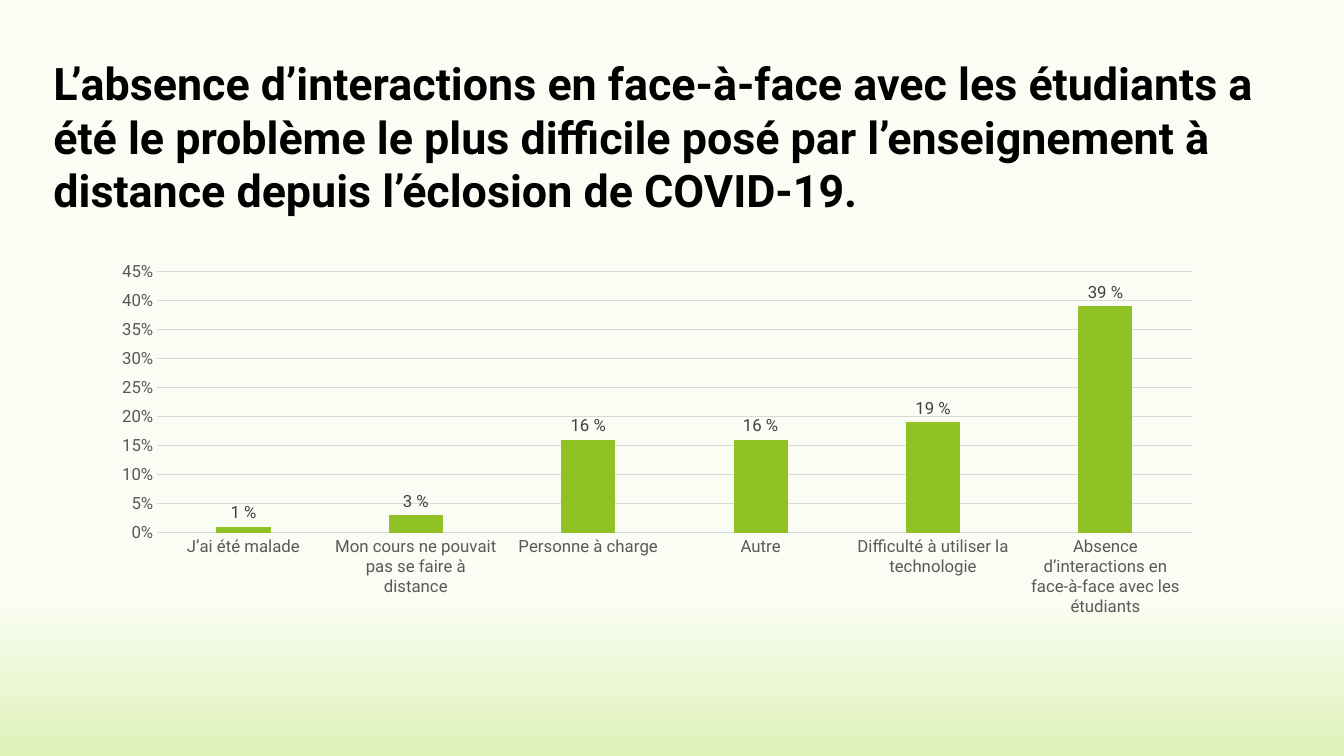
from pptx import Presentation
from pptx.chart.data import CategoryChartData
from pptx.dml.color import RGBColor
from pptx.enum import chart as chart_enum, text as text_enum
from pptx.util import Inches, Pt

FONT = "Roboto"
TITLE = (
    "L’absence d’interactions en face-à-face avec les étudiants a été le problème "
    "le plus difficile posé par l’enseignement à distance depuis l’éclosion de COVID-19."
)
ANSWERS = {
    "J’ai été malade": 0.01,
    "Mon cours ne pouvait pas se faire à distance": 0.03,
    "Personne à charge": 0.16,
    "Autre": 0.16,
    "Difficulté à utiliser la technologie": 0.19,
    "Absence d’interactions en face-à-face avec les étudiants": 0.39,
}


def color(value):
    return RGBColor.from_string(value)


def format_font(font, size, hex_color, bold=False):
    font.name = FONT
    font.size = Pt(size)
    font.bold = bold
    font.color.rgb = color(hex_color)


def write_text(frame, content, size, hex_color, bold=False, align=text_enum.PP_ALIGN.LEFT):
    paragraph = frame.paragraphs[0]
    paragraph.alignment = align
    run = paragraph.add_run()
    run.text = content
    format_font(run.font, size, hex_color, bold)


def format_line(line, hex_color):
    line.color.rgb = color(hex_color)
    line.width = Pt(0.75)


def paint_background(slide):
    fill = slide.background.fill
    fill.gradient()
    fill.gradient_angle = 270
    for stop, (position, hex_color) in zip(
        fill.gradient_stops, [(0.79, "FAFDF3"), (1, "DFF1B9")]
    ):
        stop.position = position
        stop.color.rgb = color(hex_color)


def add_title(slide, left, top, width, height):
    title = slide.shapes.title
    title.left, title.top = Inches(left), Inches(top)
    title.width, title.height = Inches(width), Inches(height)
    frame = title.text_frame
    frame.word_wrap = True
    frame.auto_size = text_enum.MSO_AUTO_SIZE.NONE
    frame.vertical_anchor = text_enum.MSO_ANCHOR.TOP
    write_text(frame, TITLE, size=32, hex_color="000000", bold=True)


def format_axes(chart):
    for axis in (chart.category_axis, chart.value_axis):
        axis.major_tick_mark = chart_enum.XL_TICK_MARK.NONE
        axis.minor_tick_mark = chart_enum.XL_TICK_MARK.NONE
        format_font(axis.tick_labels.font, 12, "595959")
    format_line(chart.category_axis.format.line, "D9D9D9")

    value_axis = chart.value_axis
    value_axis.format.line.fill.background()
    value_axis.minimum_scale, value_axis.maximum_scale = 0, 0.45
    value_axis.major_unit = 0.05
    value_axis.has_major_gridlines = True
    format_line(value_axis.major_gridlines.format.line, "D9D9D9")
    value_axis.tick_labels.number_format = "0%"
    value_axis.tick_labels.number_format_is_linked = False


def format_columns(plot):
    plot.gap_width = 219
    plot.overlap = -27
    plot.vary_by_categories = False
    series = plot.series[0]
    series.format.fill.solid()
    series.format.fill.fore_color.rgb = color("90C226")

    labels = series.data_labels
    labels.show_value = True
    labels.number_format = r"0\ %"
    labels.number_format_is_linked = False
    labels.position = chart_enum.XL_LABEL_POSITION.OUTSIDE_END
    format_font(labels.font, 12, "404040")


def add_answers_chart(slide, left, top, width, height):
    data = CategoryChartData(number_format="0%")
    data.categories = list(ANSWERS)
    data.add_series("Series 1", list(ANSWERS.values()))
    chart = slide.shapes.add_chart(
        chart_enum.XL_CHART_TYPE.COLUMN_CLUSTERED,
        Inches(left), Inches(top), Inches(width), Inches(height), data,
    ).chart
    chart.has_title = False
    chart.has_legend = False
    format_font(chart.font, 10, "000000")
    format_axes(chart)
    format_columns(chart.plots[0])


def main():
    presentation = Presentation()
    presentation.slide_width = Inches(13.33)
    presentation.slide_height = Inches(7.5)
    title_only = presentation.slide_layouts[5]
    slide = presentation.slides.add_slide(title_only)
    paint_background(slide)
    add_title(slide, 0.43, 0.5, 12.39, 1.75)
    add_answers_chart(slide, 0.99, 2.52, 11.05, 3.67)
    presentation.save("out.pptx")


if __name__ == "__main__":
    main()
